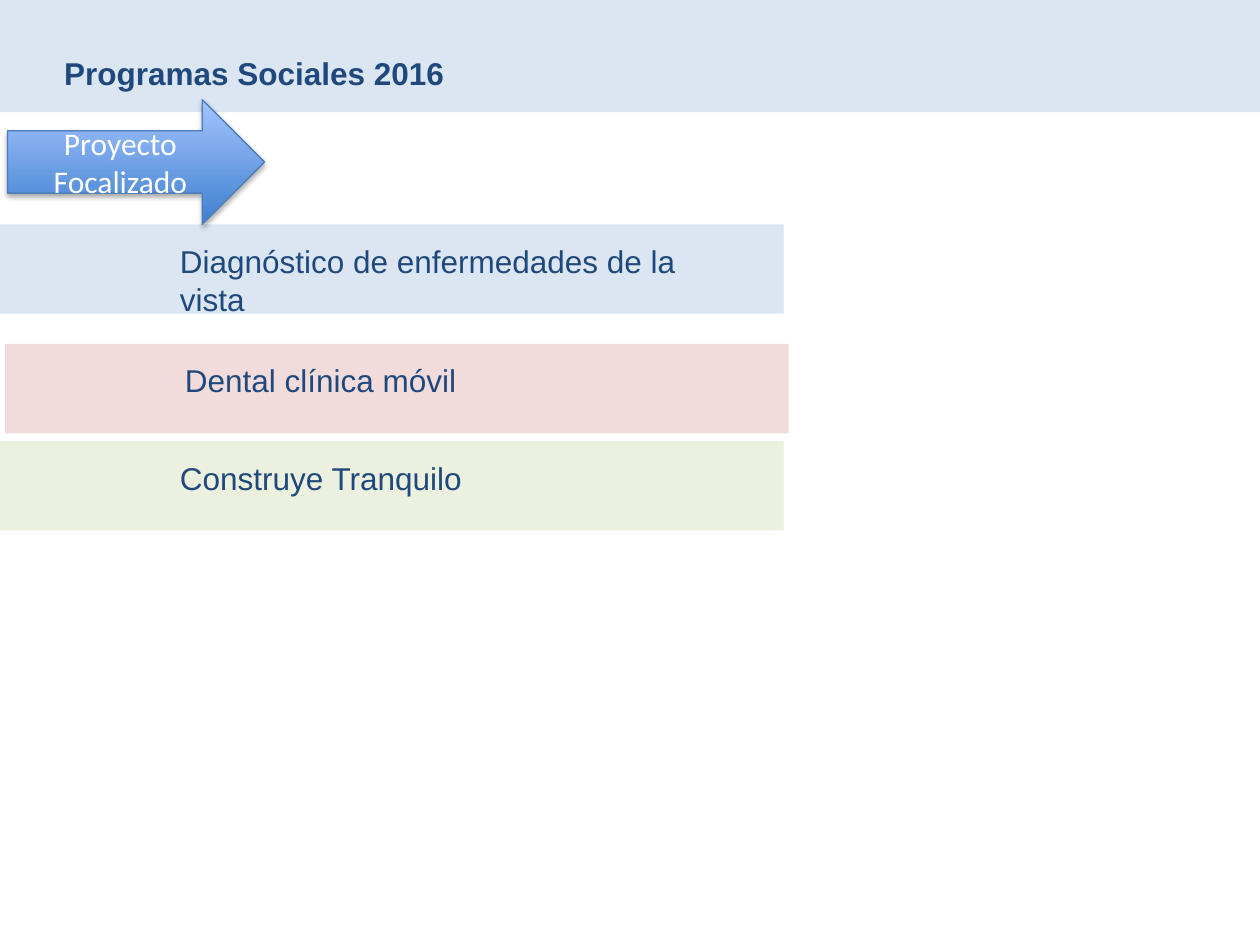
import lxml.etree
import pptx
import pptx.dml.color
import pptx.enum.shapes
import pptx.enum.text
import pptx.oxml.ns
import pptx.util

Inches = pptx.util.Inches
Pt = pptx.util.Pt
SHAPE = pptx.enum.shapes.MSO_SHAPE
ALIGN = pptx.enum.text.PP_ALIGN
ANCHOR = pptx.enum.text.MSO_ANCHOR

THEME = {
    "blue": "DCE6F2", "pink": "F2DCDB", "green": "EBF1DE",
    "navy": "1F497D", "white": "FFFFFF",
    "arrow_bottom": "3F80CE", "arrow_top": "A4C4FF", "arrow_line": "4B7EBC",
    "shadow": "000000",
    "size": 18, "body_font": "Arial", "arrow_font": "Calibri",
}

TITLE = "Programas Sociales 2016"
ARROW_LABEL = "Proyecto Focalizado"
# text, bar colour, left, top, text width
PROGRAMS = [
    ("Diagnóstico de enfermedades de la vista", "blue", 0, 1.78, 4.54),
    ("Dental clínica móvil", "pink", 0.04, 2.73, 3.03),
    ("Construye Tranquilo", "green", 0, 3.5, 3.03),
]
BAR_WIDTH, BAR_HEIGHT = 6.22, 0.71
TEXT_INDENT, TEXT_DROP, TEXT_HEIGHT = 1.33, 0.09, 0.4


def color(name):
    return pptx.dml.color.RGBColor.from_string(THEME[name])


def place(box, left, top, width, height):
    box.left, box.top = Inches(left), Inches(top)
    box.width, box.height = Inches(width), Inches(height)


def write(box, text, font="body_font", ink="navy", bold=False,
          align=ALIGN.LEFT, anchor=ANCHOR.TOP):
    frame = box.text_frame
    frame.word_wrap = True
    frame.auto_size = pptx.enum.text.MSO_AUTO_SIZE.NONE
    frame.vertical_anchor = anchor
    para = frame.paragraphs[0]
    para.alignment = align
    span = para.add_run()
    span.text = text
    span.font.name = THEME[font]
    span.font.size = Pt(THEME["size"])
    span.font.bold = bold
    span.font.color.rgb = color(ink)


def add_bar(page, fill, left, top, width, height):
    bar = page.shapes.add_shape(SHAPE.RECTANGLE, Inches(left), Inches(top),
                                Inches(width), Inches(height))
    bar.shadow.inherit = False
    bar.fill.solid()
    bar.fill.fore_color.rgb = color(fill)
    bar.line.fill.background()
    return bar


def add_drop_shadow(shape, blur, distance, opacity):
    """Cast a shadow straight down; lengths in points, opacity in percent."""
    shape.shadow.inherit = False
    tag = pptx.oxml.ns.qn
    effects = shape.element.spPr.find(tag("a:effectLst"))
    outer = lxml.etree.SubElement(
        effects, tag("a:outerShdw"), blurRad=str(Pt(blur)),
        dist=str(Pt(distance)), dir=str(90 * 60000), rotWithShape="0")
    tint = lxml.etree.SubElement(outer, tag("a:srgbClr"), val=THEME["shadow"])
    lxml.etree.SubElement(tint, tag("a:alpha"), val=str(opacity * 1000))


def add_program(page, text, fill, left, top, text_width):
    add_bar(page, fill, left, top, BAR_WIDTH, BAR_HEIGHT)
    label = page.shapes.add_textbox(
        Inches(left + TEXT_INDENT), Inches(top + TEXT_DROP),
        Inches(text_width), Inches(TEXT_HEIGHT))
    write(label, text)


def add_header(page):
    banner = add_bar(page, "blue", 0, 0, 10, 0.89)
    title = page.shapes.title
    place(title, 0.41, 0.38, 5.07, TEXT_HEIGHT)
    write(title, TITLE, bold=True)
    banner.element.addnext(title.element)


def add_arrow(page):
    arrow = page.shapes.add_shape(SHAPE.RIGHT_ARROW, Inches(0.06), Inches(0.79),
                                  Inches(2.04), Inches(0.99))
    arrow.fill.gradient()
    arrow.fill.gradient_angle = 90
    for stop, name in zip(arrow.fill.gradient_stops, ("arrow_bottom", "arrow_top")):
        stop.color.rgb = color(name)
    arrow.line.color.rgb = color("arrow_line")
    arrow.line.width = Pt(0.75)
    add_drop_shadow(arrow, blur=3.1, distance=1.8, opacity=35)
    write(arrow, ARROW_LABEL, font="arrow_font", ink="white",
          align=ALIGN.CENTER, anchor=ANCHOR.MIDDLE)


def main():
    deck = pptx.Presentation()
    deck.slide_width, deck.slide_height = Inches(10), Inches(7.5)
    page = deck.slides.add_slide(deck.slide_layouts[5])
    for program in PROGRAMS:
        add_program(page, *program)
    add_header(page)
    add_arrow(page)
    deck.save("out.pptx")


if __name__ == "__main__":
    main()
